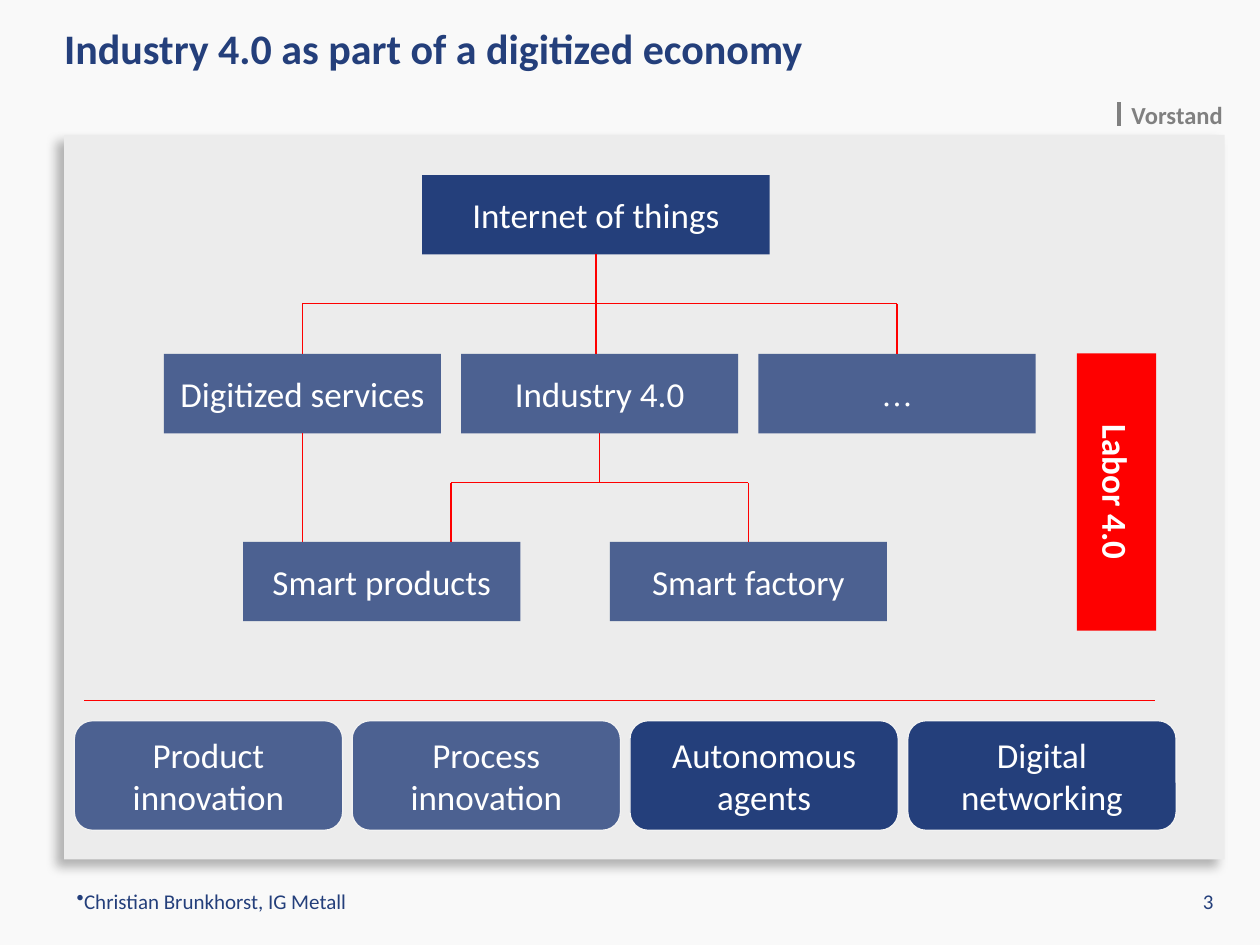
from typing import NamedTuple, Optional

import pptx
import pptx.dml.color
import pptx.enum.shapes
import pptx.enum.text
import pptx.oxml
import pptx.oxml.ns
import pptx.util
from pptx.util import Inches

COLORS = {
    "background": "F9F9F9", "panel": "ECECEC", "shadow": "0D0D0D",
    "navy": "243F7B", "red": "FE0000", "white": "FFFFFF",
    "gray": "808080", "outline": "F2F2F2",
}
A_NS = pptx.oxml.ns.nsdecls("a")
SHAPE = pptx.enum.shapes.MSO_SHAPE
ALIGN = pptx.enum.text.PP_ALIGN


class Box(NamedTuple):
    text: str
    left: float
    top: float
    width: float = 2.2
    height: float = 0.63
    fill: str = "navy"
    alpha: int = 80
    kind: int = SHAPE.RECTANGLE
    outline: Optional[str] = None
    size: int = 20
    font: str = "Calibri"
    bold: bool = False
    rotation: int = 0
    inset: float = 0


class Link(NamedTuple):
    x1: float
    y1: float
    x2: float
    y2: float
    color: str = "red"
    weight: float = 0.75
    begin: Optional[str] = None  # box whose bottom side the line leaves
    end: Optional[str] = None    # box whose top side the line reaches


def rgb(name: str):
    return pptx.dml.color.RGBColor.from_string(COLORS[name])


def write(tf, text: str, *, size=20, color="white", font="Calibri", bold=False,
          align=ALIGN.LEFT, inset=None, wrap=True, bullet=False) -> None:
    tf.word_wrap = wrap
    tf.vertical_anchor = pptx.enum.text.MSO_ANCHOR.MIDDLE
    if inset is not None:
        tf.margin_left = tf.margin_right = Inches(inset)
        tf.margin_top = tf.margin_bottom = Inches(inset)
    p = tf.paragraphs[0]
    p.alignment = align
    if bullet:
        p._p.get_or_add_pPr().append(
            pptx.oxml.parse_xml(f'<a:buChar {A_NS} char="•"/>'))
    r = p.add_run()
    r.text = text
    r.font.size = pptx.util.Pt(size)
    r.font.name = font
    r.font.bold = bold
    r.font.color.rgb = rgb(color)


def add_text(s, text: str, left: float, top: float, width: float, height: float,
             **style) -> None:
    sp = s.shapes.add_textbox(*map(Inches, (left, top, width, height)))
    write(sp.text_frame, text, **style)


def add_box(s, box: Box):
    sp = s.shapes.add_shape(
        box.kind, *map(Inches, (box.left, box.top, box.width, box.height)))
    sp.shadow.inherit = False
    sp.rotation = box.rotation
    sp.fill.solid()
    sp.fill.fore_color.rgb = rgb(box.fill)
    if box.alpha < 100:
        color = sp._element.spPr.find(".//" + pptx.oxml.ns.qn("a:srgbClr"))
        color.append(pptx.oxml.parse_xml(
            f'<a:alpha {A_NS} val="{box.alpha * 1000}"/>'))
    if box.outline:
        sp.line.color.rgb = rgb(box.outline)
        sp.line.width = pptx.util.Pt(0.75)
    else:
        sp.line.fill.background()
    if box.text:
        write(sp.text_frame, box.text, size=box.size, font=box.font,
              bold=box.bold, align=ALIGN.CENTER, inset=box.inset)
    return sp


def add_link(s, link: Link, nodes: dict) -> None:
    sp = s.shapes.add_connector(
        pptx.enum.shapes.MSO_CONNECTOR.STRAIGHT,
        *map(Inches, (link.x1, link.y1, link.x2, link.y2)))
    sp.line.color.rgb = rgb(link.color)
    sp.line.width = pptx.util.Pt(link.weight)
    sp._element.spPr.append(pptx.oxml.parse_xml(f"<a:effectLst {A_NS}/>"))
    if link.begin:
        sp.begin_connect(nodes[link.begin], 2)
    if link.end:
        sp.end_connect(nodes[link.end], 0)


# Rows of the tree and the heights of its branching lines
ROW2, ROW3 = 2.81, 4.3
ROW2_BOTTOM = ROW2 + 0.63
BRANCH1, BRANCH2 = 2.41, 3.83
LEFT, STEP = 1.3, 2.36
SERVICES_X, OTHER_X = LEFT + 1.1, LEFT + 2 * STEP + 1.1
PRODUCTS_X, INDUSTRY_X, FACTORY_X = 3.58, LEFT + STEP + 1.1, 5.94

NODES = [
    Box("Internet of things", 3.35, 1.39, width=2.76, alpha=100),
    Box("Digitized services", LEFT, ROW2),
    Box("Industry 4.0", LEFT + STEP, ROW2),
    Box("…", LEFT + 2 * STEP, ROW2, size=18, font="TeX Gyre Schola"),
    Box("Smart products", 1.93, ROW3),
    Box("Smart factory", 4.84, ROW3),
    Box("Labor 4.0", 7.76, 3.59, fill="red", alpha=100, bold=True, rotation=90),
]

LINKS = [
    Link(4.73, 2.02, 4.73, ROW2, begin="Internet of things"),
    Link(SERVICES_X, BRANCH1, OTHER_X, BRANCH1),
    Link(SERVICES_X, BRANCH1, SERVICES_X, ROW2, end="Digitized services"),
    Link(OTHER_X, BRANCH1, OTHER_X, ROW2, end="…"),
    Link(INDUSTRY_X, ROW2_BOTTOM, INDUSTRY_X, BRANCH2, begin="Industry 4.0"),
    Link(PRODUCTS_X, BRANCH2, FACTORY_X, BRANCH2),
    Link(PRODUCTS_X, BRANCH2, PRODUCTS_X, ROW3),
    Link(FACTORY_X, BRANCH2, FACTORY_X, ROW3, end="Smart factory"),
    Link(SERVICES_X, ROW2_BOTTOM, SERVICES_X, ROW3, begin="Digitized services"),
    Link(0.67, 5.56, 9.17, 5.56, weight=1),
]

# Label and opacity of each foundation tile
FOUNDATIONS = [("Product innovation", 80), ("Process innovation", 80),
               ("Autonomous agents", 100), ("Digital networking", 100)]


def main() -> None:
    prs = pptx.Presentation()
    prs.slide_width, prs.slide_height = Inches(10), Inches(7.5)
    s = prs.slides.add_slide(prs.slide_layouts[6])
    s.background.fill.solid()
    s.background.fill.fore_color.rgb = rgb("background")

    # Panel with its shadow to the lower left
    panel = add_box(s, Box("", 0.51, 1.07, 9.21, 5.75, fill="panel", alpha=100))
    effects = panel._element.spPr.find(pptx.oxml.ns.qn("a:effectLst"))
    effects.append(pptx.oxml.parse_xml(
        f'<a:outerShdw {A_NS} blurRad="76200" dist="76200" dir="8100000" '
        f'algn="tr" rotWithShape="0"><a:srgbClr val="{COLORS["shadow"]}">'
        '<a:alpha val="30000"/></a:srgbClr></a:outerShdw>'))

    # Header and footer
    add_link(s, Link(8.88, 0.81, 8.88, 1, color="gray", weight=2), {})
    add_text(s, "Vorstand", 8.98, 0.75, 1.02, 0.32, size=14, color="gray",
             bold=True, inset=0, wrap=False)
    add_text(s, "Industry 4.0 as part of a digitized economy", 0.51, 0, 7.99, 0.75,
             size=24, color="navy", bold=True, inset=0)
    add_text(s, "Christian Brunkhorst, IG Metall", 0.51, 6.95, 7.08, 0.4,
             size=12, color="navy", bullet=True)
    add_text(s, "3", 9.02, 6.95, 0.71, 0.4, size=12, color="navy",
             align=ALIGN.RIGHT)

    # Tree
    nodes = {box.text: add_box(s, box) for box in NODES}
    for link in LINKS:
        add_link(s, link, nodes)

    # Foundation tiles
    for i, (label, alpha) in enumerate(FOUNDATIONS):
        add_box(s, Box(label, 0.59 + 2.205 * i, 5.72, 2.13, 0.87, alpha=alpha,
                       kind=SHAPE.ROUNDED_RECTANGLE, outline="outline", inset=0.05))

    prs.save("out.pptx")


if __name__ == "__main__":
    main()
